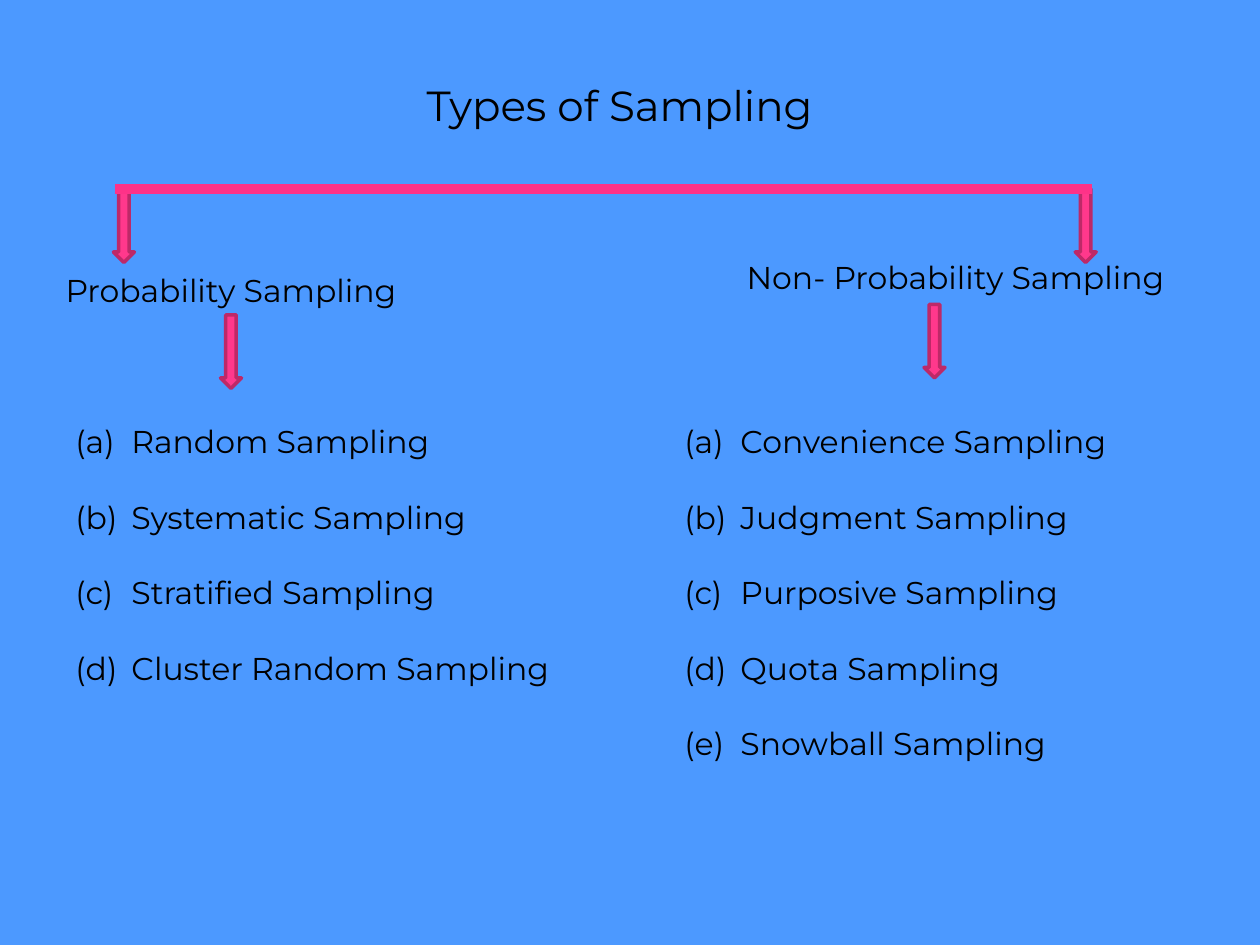
from dataclasses import dataclass

from lxml.etree import SubElement
from pptx import Presentation
from pptx.dml.color import RGBColor
from pptx.enum.shapes import MSO_CONNECTOR, MSO_SHAPE
from pptx.enum.text import MSO_AUTO_SIZE, PP_ALIGN
from pptx.oxml.ns import qn
from pptx.slide import Slide
from pptx.util import Inches, Length, Pt

COLORS = {
    "background": "4C99FF",
    "text": "000000",
    "arrow": "FF388C",
    "arrow_edge": "BD2968",
    "bar": "FE3288",
}
FONT = "Montserrat"
CELLS_PER_INCH = 12  # the slide is a grid of 120 columns by 90 rows
LIST_INDENT = Inches(0.38)


@dataclass
class TextBlock:
    lines: list[str]
    column: float
    row: float
    columns: float
    rows: float
    size: int = 18
    lettered: bool = False


@dataclass
class DownArrow:
    column: float
    row: float
    columns: float = 2
    rows: float = 7


TEXT_BLOCKS = [
    TextBlock(["Types of Sampling"], 33, 7, 52, 6, size=24),
    TextBlock(["Probability Sampling"], -4, 25.2, 52, 4.8),
    TextBlock(["Non- Probability Sampling"], 65, 24, 52, 4.8),
    TextBlock(
        [" Random Sampling", " Systematic Sampling", " Stratified Sampling",
         " Cluster Random Sampling"],
        6, 36, 53, 30.3, lettered=True,
    ),
    TextBlock(
        [" Convenience Sampling", " Judgment Sampling", " Purposive Sampling",
         " Quota Sampling", " Snowball Sampling"],
        64, 36, 47, 36.6, lettered=True,
    ),
]
BRANCH_ARROWS = [DownArrow(10.8, 18), DownArrow(102.4, 18)]
LIST_ARROWS = [DownArrow(21, 30), DownArrow(88, 29)]


def cells(count: float) -> Length:
    return Inches(count / CELLS_PER_INCH)


def color(name: str) -> RGBColor:
    return RGBColor.from_string(COLORS[name])


def set_attributes(target: object, values: dict) -> None:
    for name, value in values.items():
        setattr(target, name, value)


def add_letter_bullet(paragraph) -> None:
    """Number the paragraph (a), (b), ... with a hanging indent."""
    properties = paragraph._p.get_or_add_pPr()
    properties.set("marL", str(LIST_INDENT))
    properties.set("indent", str(-LIST_INDENT))
    SubElement(properties, qn("a:buFont"), typeface=FONT)
    SubElement(properties, qn("a:buAutoNum"), type="alphaLcParenBoth")


def draw_text(slide: Slide, block: TextBlock) -> None:
    box = slide.shapes.add_textbox(
        cells(block.column), cells(block.row), cells(block.columns), cells(block.rows)
    )
    frame = box.text_frame
    set_attributes(frame, {
        "word_wrap": True,
        "auto_size": MSO_AUTO_SIZE.SHAPE_TO_FIT_TEXT,
        "text": "\n".join(block.lines),
    })
    for paragraph in frame.paragraphs:
        if block.lettered:
            paragraph.line_spacing = 2.0
            add_letter_bullet(paragraph)
        else:
            paragraph.alignment = PP_ALIGN.CENTER
        font = paragraph.runs[0].font
        set_attributes(font, {"name": FONT, "size": Pt(block.size)})
        font.color.rgb = color("text")


def draw_arrow(slide: Slide, arrow: DownArrow) -> None:
    shape = slide.shapes.add_shape(
        MSO_SHAPE.DOWN_ARROW,
        cells(arrow.column), cells(arrow.row), cells(arrow.columns), cells(arrow.rows),
    )
    shape.shadow.inherit = False
    shape.fill.solid()
    shape.fill.fore_color.rgb = color("arrow")
    shape.line.width = Pt(2)
    shape.line.color.rgb = color("arrow_edge")


def draw_branch_bar(slide: Slide) -> None:
    bar = slide.shapes.add_connector(
        MSO_CONNECTOR.STRAIGHT, cells(11), cells(18), cells(104), cells(18)
    )
    bar.line.width = Pt(6)
    bar.line.color.rgb = color("bar")
    SubElement(bar._element.spPr, qn("a:effectLst"))


def main() -> None:
    presentation = Presentation()
    set_attributes(
        presentation, {"slide_width": Inches(10), "slide_height": Inches(7.5)}
    )
    slide = presentation.slides.add_slide(presentation.slide_layouts[6])
    slide.background.fill.solid()
    slide.background.fill.fore_color.rgb = color("background")

    for arrow in BRANCH_ARROWS:
        draw_arrow(slide, arrow)
    draw_branch_bar(slide)
    for block in TEXT_BLOCKS:
        draw_text(slide, block)
    for arrow in LIST_ARROWS:
        draw_arrow(slide, arrow)

    presentation.save("out.pptx")


if __name__ == "__main__":
    main()
